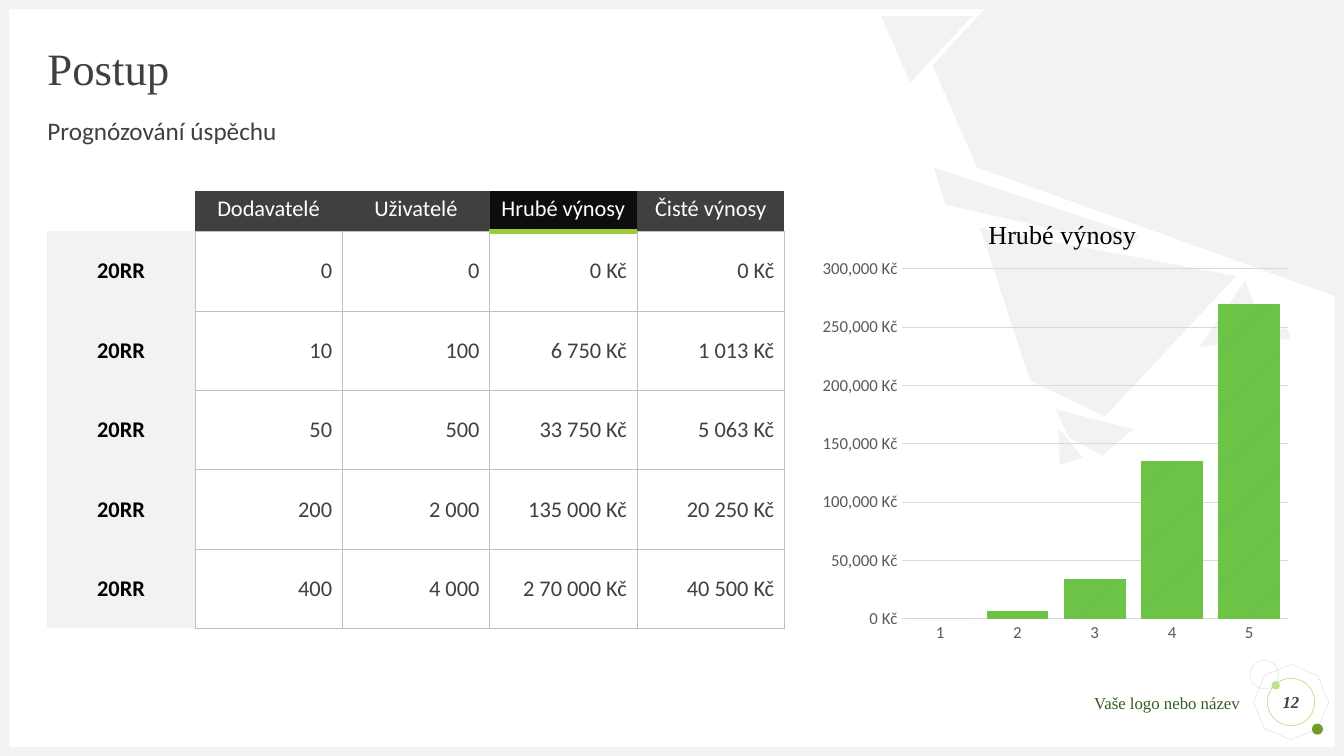
from lxml import etree
from pptx import Presentation
from pptx.chart.data import CategoryChartData
from pptx.dml.color import RGBColor
from pptx.enum.chart import XL_CHART_TYPE, XL_TICK_MARK
from pptx.enum.dml import MSO_PATTERN
from pptx.enum.shapes import MSO_SHAPE
from pptx.enum.text import MSO_ANCHOR, MSO_AUTO_SIZE, PP_ALIGN
from pptx.oxml.ns import qn
from pptx.util import Inches, Pt

W, H = 13.33, 7.5
EDGE = 0.09
LEFT, TOP = 0.47, 1.89
WIDE = W - 2 * LEFT

WHITE = RGBColor(0xFF, 0xFF, 0xFF)
BLACK = RGBColor(0, 0, 0)
PALE = RGBColor(0xF2, 0xF2, 0xF2)
RULE = RGBColor(0xD9, 0xD9, 0xD9)
GRID = RGBColor(0xBF, 0xBF, 0xBF)
LABEL = RGBColor(0x59, 0x59, 0x59)
DARK = RGBColor(0x40, 0x40, 0x40)
INK = RGBColor(0x0D, 0x0D, 0x0D)
LIME = RGBColor(0x9A, 0xCB, 0x39)
GREEN = RGBColor(0x64, 0xC2, 0x4A)
MINT = RGBColor(0xC2, 0xE0, 0x88)
OLIVE = RGBColor(0x74, 0x9A, 0x29)
MOSS = RGBColor(0x37, 0x5C, 0x1E)

SANS, SERIF = "Calibri", "Times New Roman"
LEFTWARD, CENTER, RIGHT = PP_ALIGN.LEFT, PP_ALIGN.CENTER, PP_ALIGN.RIGHT
TOPMOST, MIDDLE = MSO_ANCHOR.TOP, MSO_ANCHOR.MIDDLE
RECT, OVAL, OCTAGON = MSO_SHAPE.RECTANGLE, MSO_SHAPE.OVAL, MSO_SHAPE.OCTAGON

# Background outlines, in hundredths of an inch
FACETS = [
    [(874, 16), (964, 16), (903, 82)],
    [(985, 0), (1333, 0), (1333, 297), (969, 166), (925, 65)],
    [(972, 226), (1226, 274), (1096, 413), (1022, 378)],
    [(1050, 425), (1074, 454), (1051, 461)],
    [(1047, 406), (1124, 426), (1093, 452), (1060, 434)],
    [(926, 166), (1130, 234), (1121, 245), (938, 203)],
    [(1276, 325), (1280, 336), (1232, 340)],
    [(1235, 278), (1253, 327), (1210, 342), (1190, 344)],
]

HEADS = ["", "Dodavatelé", "Uživatelé", "Hrubé výnosy", "Čisté výnosy"]
ROWS = [
    ["20RR", "0", "0", "0 Kč", "0 Kč"],
    ["20RR", "10", "100", "6 750 Kč", "1 013 Kč"],
    ["20RR", "50", "500", "33 750 Kč", "5 063 Kč"],
    ["20RR", "200", "2 000", "135 000 Kč", "20 250 Kč"],
    ["20RR", "400", "4 000", "2 70 000 Kč", "40 500 Kč"],
]
KEY = 3  # highlighted column
GROSS = [0, 7000, 34000, 135000, 270000]


def write(frame, text, size, face, color, align, bold=False, italic=False):
    frame.text = text
    para = frame.paragraphs[0]
    para.alignment = align
    for run in para.runs:
        font = run.font
        font.size, font.name, font.bold, font.italic = Pt(size), face, bold, italic
        font.color.rgb = color
    return para


def trim(frame, anchor):
    frame.margin_left = frame.margin_right = 0
    frame.margin_top = frame.margin_bottom = 0
    frame.vertical_anchor = anchor
    frame.word_wrap = True
    frame.auto_size = MSO_AUTO_SIZE.NONE


def paint(shape, fill=None, line=None):
    shape.shadow.inherit = False
    if fill is None:
        shape.fill.background()
    else:
        shape.fill.solid()
        shape.fill.fore_color.rgb = fill
    if line is None:
        shape.line.fill.background()
    else:
        shape.line.color.rgb = line
        shape.line.width = Pt(0.25)
    return shape


def draw(slide, kind, box, fill=None, line=None):
    shape = slide.shapes.add_shape(kind, *map(Inches, box))
    return paint(shape, fill, line)


def add_back(slide):
    for pts in FACETS:
        path = slide.shapes.build_freeform(*pts[0], scale=Inches(0.01))
        path.add_line_segments(pts[1:], close=True)
        paint(path.convert_to_shape(), PALE)
    for box in [(0, 0, W, EDGE), (0, H - EDGE, W, EDGE),
                (0, 0, EDGE, H), (W - EDGE, 0, EDGE, H)]:
        draw(slide, RECT, box, PALE)


def add_head(slide, box):
    x, y, w, h = box
    title, body = slide.shapes.title, slide.placeholders[1]
    parts = [(title, "Postup", 32, SERIF, y, h, MIDDLE),
             (body, "Prognózování úspěchu", 18, SANS, y + 1.5 * h, 0.3, TOPMOST)]
    for item, text, size, face, top, tall, anchor in parts:
        item.left, item.top, item.width, item.height = map(Inches, (x, top, w, tall))
        trim(item.text_frame, anchor)
        para = write(item.text_frame, text, size, face, DARK, LEFTWARD)
        para.line_spacing, para.space_before = 0.9, Pt(0)
        slide.shapes.element.append(item.element)  # above the background
    props = body.text_frame.paragraphs[0]._p.get_or_add_pPr()
    props.set("marL", "0")
    props.set("indent", "0")
    etree.SubElement(props, qn("a:buNone"))


def edge(cell, side, color=None, width=0.25):
    line = etree.SubElement(cell._tc.get_or_add_tcPr(), qn("a:ln" + side))
    if color is None:
        line.set("w", "0")
        etree.SubElement(line, qn("a:noFill"))
    else:
        line.set("w", str(Pt(width)))
        fill = etree.SubElement(line, qn("a:solidFill"))
        etree.SubElement(fill, qn("a:srgbClr")).set("val", str(color))


def add_grid(slide, box, head=0.4):
    data = [HEADS] + ROWS
    rows, cols = len(data), len(HEADS)
    table = slide.shapes.add_table(rows, cols, *map(Inches, box)).table
    for col in table.columns:
        col.width = Inches(box[2] / cols)
    for r, row in enumerate(data):
        table.rows[r].height = Inches((box[3] - head) / (rows - 1) if r else head)
        for c, text in enumerate(row):
            cell = table.cell(r, c)
            # Header row, year column, then the figures
            if r == 0:
                sides = "B" if c else ""
                fill = INK if c == KEY else DARK if c else WHITE
                color, align = WHITE, CENTER
            elif c == 0:
                sides, fill, color, align = "R", PALE, BLACK, CENTER
            else:
                sides, fill, color, align = "LRTB", WHITE, DARK, RIGHT
            for side in "LRTB":
                thick = c == KEY and (r, side) in [(0, "B"), (1, "T")]
                if side not in sides:
                    edge(cell, side)
                elif thick:
                    edge(cell, side, LIME, 4.5)
                else:
                    edge(cell, side, GRID)
            cell.fill.solid()
            cell.fill.fore_color.rgb = fill
            cell.vertical_anchor = MIDDLE if r else TOPMOST
            write(cell.text_frame, text, 16, SANS, color, align, bold=r > 0 and c == 0)


def fix(part, index, **shares):
    for old in part.findall(qn("c:layout")):
        part.remove(old)
    layout = etree.Element(qn("c:layout"))
    part.insert(index, layout)
    manual = etree.SubElement(layout, qn("c:manualLayout"))
    if "w" in shares:
        etree.SubElement(manual, qn("c:layoutTarget")).set("val", "inner")
    for mode in ("xMode", "yMode"):
        etree.SubElement(manual, qn("c:" + mode)).set("val", "edge")
    for name, share in shares.items():
        etree.SubElement(manual, qn("c:" + name)).set("val", str(share))


def add_bars(slide, box):
    data = CategoryChartData()
    data.categories = [str(n + 1) for n in range(len(GROSS))]
    data.add_series("Series 1", GROSS)
    kind = XL_CHART_TYPE.COLUMN_CLUSTERED
    chart = slide.shapes.add_chart(kind, *map(Inches, box), data).chart
    chart.has_legend = False
    chart.font.size, chart.font.name = Pt(10), SANS
    chart.font.color.rgb = BLACK
    chart.has_title = True
    title = chart.chart_title
    write(title.text_frame, "Hrubé výnosy", 18.6, SERIF, BLACK, CENTER)
    fix(title._element, 1, x=0.35, y=0.05)
    fix(chart._chartSpace.chart.plotArea, 0, x=0.18, y=0.17, w=0.8, h=0.76)

    # Axes
    cats, vals = chart.category_axis, chart.value_axis
    for axis in (cats, vals):
        axis.major_tick_mark = axis.minor_tick_mark = XL_TICK_MARK.NONE
        font = axis.tick_labels.font
        font.size, font.name = Pt(12), SANS
        font.color.rgb = LABEL
    vals.minimum_scale, vals.maximum_scale, vals.major_unit = 0, 300000, 50000
    vals.tick_labels.number_format = "#,##0\\ [$Kč-405]"
    vals.tick_labels.number_format_is_linked = False
    vals.format.line.fill.background()
    for line in (cats.format.line, vals.major_gridlines.format.line):
        line.color.rgb, line.width = RULE, Pt(0.75)

    # Columns
    plot = chart.plots[0]
    plot.gap_width, plot.vary_by_categories = 25, False
    fill = plot.series[0].format.fill
    fill.patterned()
    fill.pattern = MSO_PATTERN.DARK_UPWARD_DIAGONAL
    fill.fore_color.rgb, fill.back_color.rgb = LIME, GREEN


def add_foot(slide, box):
    x, y, side = box
    draw(slide, OCTAGON, (x, y, side, side), line=RULE).rotation = 22.7
    # Circles as shares of the octagon's side
    for dx, dy, size, fill, line in [(-0.09, -0.1, 0.41, None, RULE),
                                     (0.16, 0.16, 0.68, None, LIME),
                                     (0.22, 0.2, 0.12, MINT, None),
                                     (0.8, 0.81, 0.16, OLIVE, None)]:
        spot = (x + dx * side, y + dy * side, size * side, size * side)
        ring = draw(slide, OVAL, spot, fill, line)
        if line == LIME:
            trim(ring.text_frame, MIDDLE)
            write(ring.text_frame, "12", 12, SERIF, DARK, CENTER, True, True)
    note = slide.shapes.add_textbox(*map(Inches, (x - 2.91, y + 0.25, 2.75, 0.2)))
    trim(note.text_frame, TOPMOST)
    write(note.text_frame, "Vaše logo nebo název", 12, SERIF, MOSS, RIGHT)


def main():
    deck = Presentation()
    deck.slide_width, deck.slide_height = Inches(W), Inches(H)
    slide = deck.slides.add_slide(deck.slide_layouts[1])
    add_back(slide)
    add_head(slide, (LEFT, LEFT, WIDE, 0.47))
    add_grid(slide, (LEFT, TOP, 7.31, 4.34))
    add_bars(slide, (8.08, TOP, 4.79, 4.57))
    add_foot(slide, (12.46, 6.62, 0.69))
    deck.save("out.pptx")


if __name__ == "__main__":
    main()
